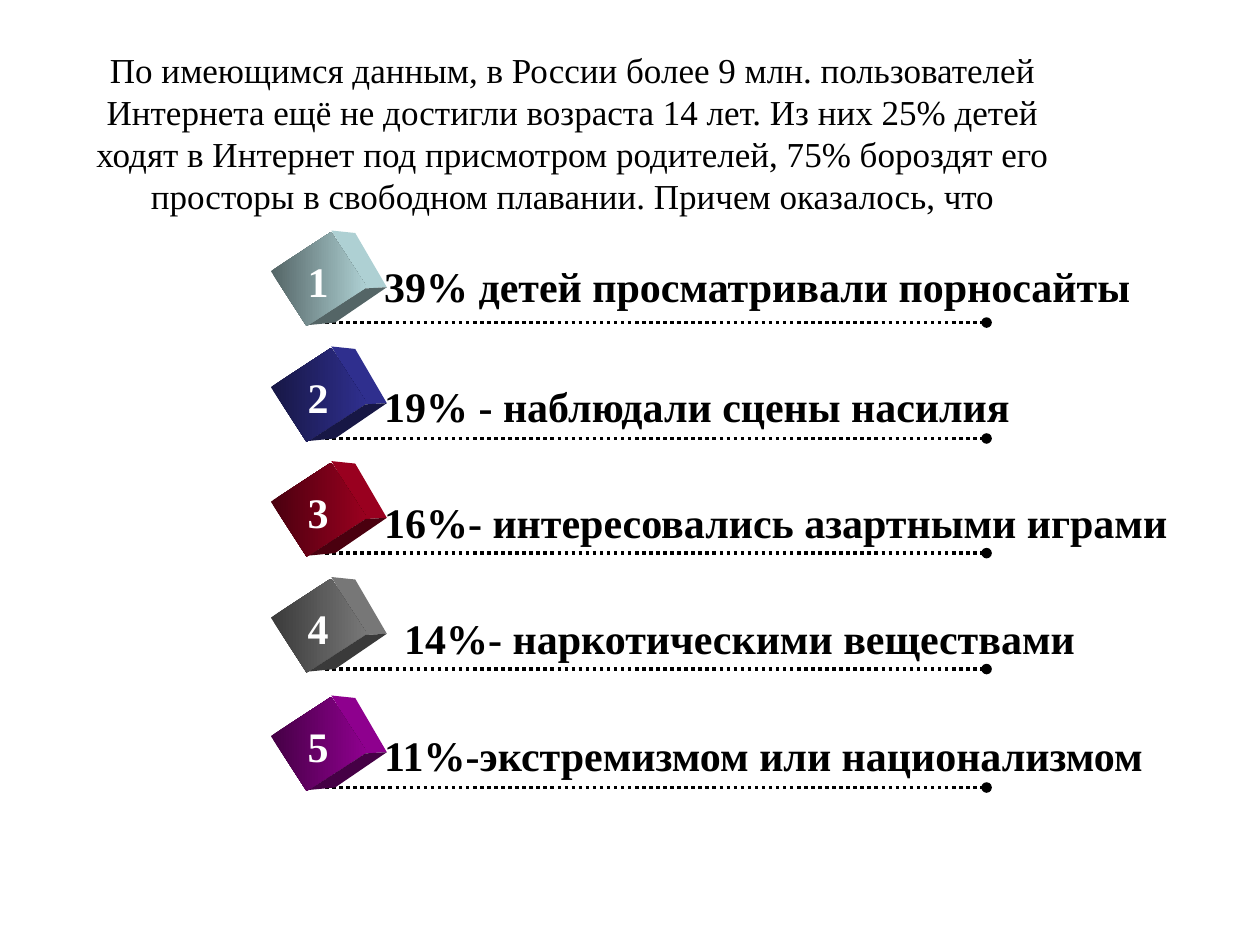
from lxml import etree
from pptx import Presentation
from pptx.dml.color import RGBColor
from pptx.enum.dml import MSO_LINE
from pptx.enum.shapes import MSO_CONNECTOR, MSO_SHAPE
from pptx.enum.text import MSO_ANCHOR, MSO_AUTO_SIZE, PP_ALIGN
from pptx.oxml.ns import qn
from pptx.util import Inches, Pt

CENTER, LEFT = PP_ALIGN.CENTER, PP_ALIGN.LEFT
MIDDLE, TOP = MSO_ANCHOR.MIDDLE, MSO_ANCHOR.TOP
DOTTED = MSO_LINE.ROUND_DOT
STRAIGHT = MSO_CONNECTOR.STRAIGHT
RECTANGLE = MSO_SHAPE.RECTANGLE

THEME = {
    "font": "Times New Roman",
    "text": RGBColor.from_string("000000"),
    "number": RGBColor.from_string("FFFFFF"),
    "title_size": Pt(20),
    "item_size": Pt(24),
    "line_width": Pt(2),
    "dark": 0.45,
    "light": 0.93,
}

INTRO = (
    "По имеющимся данным, в России более 9 млн. пользователей Интернета "
    "ещё не достигли возраста 14 лет. Из них 25% детей ходят в Интернет под "
    "присмотром родителей, 75% бороздят его просторы в свободном плавании. "
    "Причем оказалось, что"
)

# Cube top, label left, label top, cube colour, label
ITEMS = [
    (1.93, 2.95, 2.02, "BBE0E3", "39% детей просматривали порносайты"),
    (2.85, 2.95, 2.97, "333399", "19% - наблюдали сцены насилия"),
    (3.76, 2.95, 3.89, "A50021", "16%- интересовались азартными играми"),
    (4.68, 3.11, 4.81, "808080", "14%- наркотическими веществами"),
    (5.62, 2.95, 5.74, "990099", "11%-экстремизмом или национализмом"),
]

# Corners of the cube's receding faces, x on the slide and y from the cube top
SIDE_FACE = [(2.63, -0.1), (2.82, -0.08), (3.07, 0.35), (2.9, 0.36)]
BOTTOM_FACE = [(2.45, 0.65), (2.66, 0.63), (3.07, 0.35), (2.9, 0.36)]


def write(shape, text, *, size, color, bold=False, align=LEFT, anchor=TOP, wrap=True):
    frame = shape.text_frame
    frame.word_wrap = wrap
    frame.auto_size = MSO_AUTO_SIZE.NONE
    frame.vertical_anchor = anchor
    para = frame.paragraphs[0]
    para.alignment = align
    span = para.add_run()
    span.text = text
    span.font.name = THEME["font"]
    span.font.size = size
    span.font.bold = bold
    span.font.color.rgb = color


def shade(color, factor):
    return RGBColor(*(round(channel * factor) for channel in color))


deck = Presentation()
deck.slide_width, deck.slide_height = Inches(10), Inches(7.5)
page = deck.slides.add_slide(deck.slide_layouts[5])
shapes = page.shapes

title = shapes.title
title.left, title.top = Inches(0.51), Inches(0.38)
title.width, title.height = Inches(8.07), Inches(1.34)
write(title, INTRO, size=THEME["title_size"], color=THEME["text"],
      align=CENTER, anchor=MIDDLE)

for number, (top, label_left, label_top, color, label) in enumerate(ITEMS, 1):
    base = RGBColor.from_string(color)
    dark, light = shade(base, THEME["dark"]), shade(base, THEME["light"])

    line_y = Inches(top + 0.63)
    rule = shapes.add_connector(STRAIGHT, Inches(2.58), line_y, Inches(7.83), line_y)
    rule.line.color.rgb = THEME["text"]
    rule.line.width = THEME["line_width"]
    rule.line.dash_style = DOTTED
    etree.SubElement(rule.line._get_or_add_ln(), qn("a:tailEnd"), type="oval")
    etree.SubElement(rule._element.spPr, qn("a:effectLst"))

    for corners, face_color in ((SIDE_FACE, light), (BOTTOM_FACE, dark)):
        points = [(Inches(x), Inches(top + y)) for x, y in corners]
        builder = shapes.build_freeform(*points[0])
        builder.add_line_segments(points[1:], close=True)
        face = builder.convert_to_shape()
        face.shadow.inherit = False
        face.fill.solid()
        face.fill.fore_color.rgb = face_color
        face.line.fill.background()

    front = shapes.add_shape(RECTANGLE, Inches(2.27), Inches(top),
                             Inches(0.52), Inches(0.57))
    front.rotation = 57
    front.shadow.inherit = False
    front.line.fill.background()
    front.fill.gradient()
    front.fill.gradient_angle = 57
    for stop, stop_color in zip(front.fill.gradient_stops, (dark, light)):
        stop.color.rgb = stop_color

    number_box = shapes.add_textbox(Inches(2.33), Inches(top + 0.05),
                                    Inches(0.39), Inches(0.5))
    write(number_box, str(number), size=THEME["item_size"], color=THEME["number"],
          bold=True, align=CENTER, wrap=False)

    label_box = shapes.add_textbox(Inches(label_left), Inches(label_top),
                                   Inches(6.8), Inches(0.51))
    write(label_box, label, size=THEME["item_size"], color=THEME["text"], bold=True)

deck.save("out.pptx")
